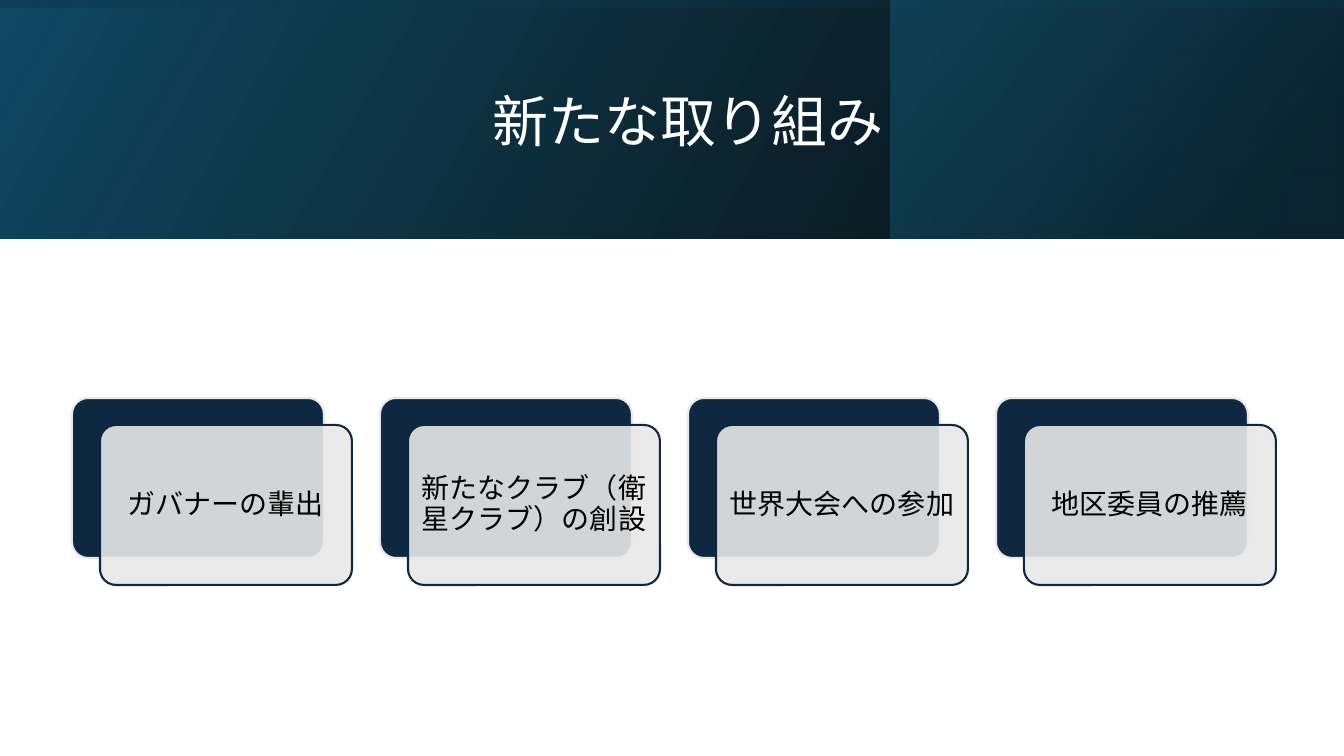
from lxml.etree import SubElement
from pptx import Presentation
from pptx.dml.color import RGBColor
from pptx.enum.shapes import MSO_SHAPE
from pptx.enum.text import MSO_ANCHOR, PP_ALIGN
from pptx.oxml import parse_xml
from pptx.oxml.ns import nsdecls, qn
from pptx.util import Pt

TITLE = "新たな取り組み"
INITIATIVES = [
    "ガバナーの輩出",
    "新たなクラブ（衛星クラブ）の創設",
    "世界大会への参加",
    "地区委員の推薦",
]
FONT = "Noto Sans CJK JP"
NAVY, PALE = "0E2841", "E8E8E8"

# Header layers: box in px, rotation, gradient angle, stops (position, colour, opacity)
HEADER_LAYERS = [
    ((0, 0, 1344, 239), 0, 330, [(0, "000000", 96), (100, "104862", 100)]),
    ((891, 0, 452, 239), 0, 320, [(19, "0B3041", 68), (100, "156082", 48)]),
    ((552, -552, 239, 1344), 270, 350, [(23, "104862", 16), (99, "000000", 45)]),
]
TITLE_BOX = (152, 38, 1072, 173)
CARD_LEFT, CARD_TOP, CARD_STEP = 72, 398, 308
CARD_SIZE = (252, 160)
FRONT_OFFSET = (28, 27)


def px(length):
    return round(length * 914400 / 100.8)


def color(value):
    return RGBColor.from_string(value)


def add_plain_shape(page, kind, box):
    shape = page.shapes.add_shape(kind, *map(px, box))
    shape.shadow.inherit = False
    return shape


def add_header_layer(page, box, rotation, angle, stops):
    """Add a mirrored rectangle with a translucent gradient."""
    layer = add_plain_shape(page, MSO_SHAPE.RECTANGLE, box)
    layer.line.fill.background()
    layer.rotation = rotation
    layer.fill.background()
    properties = layer._element.spPr
    properties.find(qn("a:xfrm")).set("flipH", "1")
    marks = "".join(
        f'<a:gs pos="{position * 1000}"><a:srgbClr val="{value}">'
        f'<a:alpha val="{opacity * 1000}"/></a:srgbClr></a:gs>'
        for position, value, opacity in stops
    )
    gradient = parse_xml(
        f'<a:gradFill {nsdecls("a")} rotWithShape="1"><a:gsLst>{marks}</a:gsLst>'
        f'<a:lin ang="{angle * 60000}" scaled="0"/></a:gradFill>'
    )
    properties.replace(properties.find(qn("a:noFill")), gradient)


def add_card(page, left, top, fill, line, opacity=100):
    card = add_plain_shape(page, MSO_SHAPE.ROUNDED_RECTANGLE, (left, top, *CARD_SIZE))
    card.adjustments[0] = 0.1
    card.fill.solid()
    card.fill.fore_color.rgb = color(fill)
    card.line.color.rgb = color(line)
    card.line.width = Pt(1.5)
    if opacity < 100:
        tint = card._element.spPr.find(qn("a:solidFill")).find(qn("a:srgbClr"))
        SubElement(tint, qn("a:alpha")).set("val", str(opacity * 1000))
    return card


def write(shape, text, size, ink, inset=None, after=0):
    frame = shape.text_frame
    frame.word_wrap = True
    frame.vertical_anchor = MSO_ANCHOR.MIDDLE
    if inset is not None:
        frame.margin_left = frame.margin_right = px(inset)
        frame.margin_top = frame.margin_bottom = px(inset)
    para = frame.paragraphs[0]
    para.alignment = PP_ALIGN.CENTER
    para.line_spacing = 0.9
    para.space_after = Pt(after)
    span = para.add_run()
    span.text = text
    span.font.size = Pt(size)
    span.font.name = FONT
    span.font.color.rgb = color(ink)
    SubElement(span.font._element, qn("a:ea")).set("typeface", FONT)


def main():
    deck = Presentation()
    deck.slide_width, deck.slide_height = px(1344), px(756)
    page = deck.slides.add_slide(deck.slide_layouts[6])

    for layer in HEADER_LAYERS:
        add_header_layer(page, *layer)
    write(page.shapes.add_textbox(*map(px, TITLE_BOX)), TITLE, size=40, ink="FFFFFF")

    for index, initiative in enumerate(INITIATIVES):
        left = CARD_LEFT + index * CARD_STEP
        add_card(page, left, CARD_TOP, fill=NAVY, line=PALE)
        front = add_card(page, left + FRONT_OFFSET[0], CARD_TOP + FRONT_OFFSET[1],
                         fill=PALE, line=NAVY, opacity=90)
        write(front, initiative, size=20, ink="000000", inset=8, after=7)

    deck.save("out.pptx")


if __name__ == "__main__":
    main()
